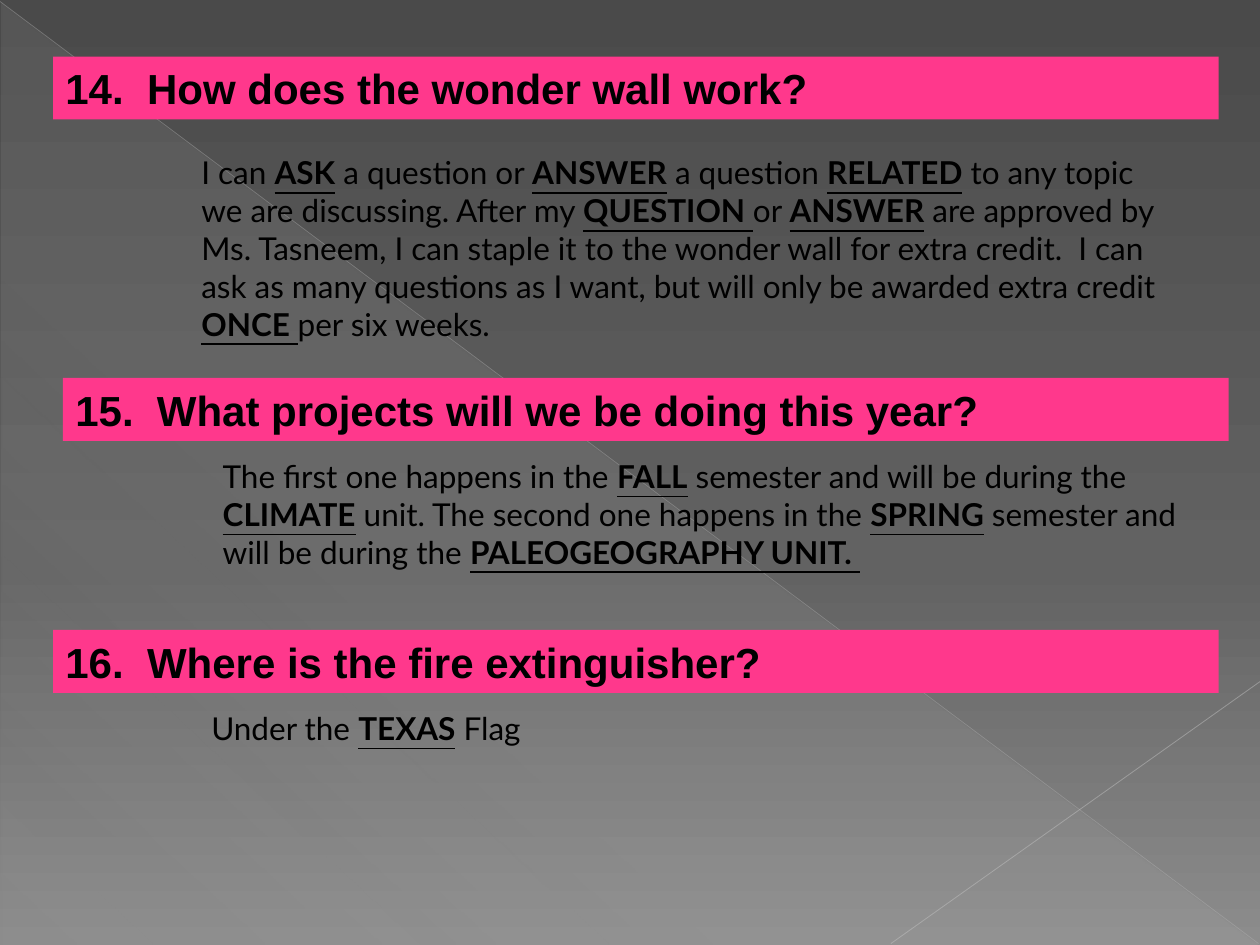
from lxml import etree
from pptx import Presentation
from pptx.dml.color import RGBColor
from pptx.enum.shapes import MSO_CONNECTOR, MSO_SHAPE
from pptx.enum.text import MSO_ANCHOR, PP_ALIGN
from pptx.oxml.ns import qn
from pptx.util import Cm, Pt

STRAIGHT = MSO_CONNECTOR.STRAIGHT
RECTANGLE = MSO_SHAPE.RECTANGLE
RIGHT_TRIANGLE = MSO_SHAPE.RIGHT_TRIANGLE
MIDDLE = MSO_ANCHOR.MIDDLE
LEFT = PP_ALIGN.LEFT

PINK = RGBColor(0xFF, 0x38, 0x8C)
BLACK = RGBColor(0x00, 0x00, 0x00)
DARK_GREY = RGBColor(0x4A, 0x4A, 0x4A)
MID_GREY = RGBColor(0x62, 0x62, 0x62)
LIGHT_GREY = RGBColor(0x8C, 0x8C, 0x8C)
PALE_GREY = RGBColor(0xD2, 0xD2, 0xD2)
LONG_LINE = RGBColor(0xBF, 0xBF, 0xBF)
SHORT_LINE = RGBColor(0xC6, 0xC6, 0xC6)

BACKGROUND_STOPS = [(0, DARK_GREY, 100), (60, MID_GREY, 100), (100, LIGHT_GREY, 100)]
TRIANGLE_STOPS = [(0, PALE_GREY, 10), (70, PALE_GREY, 8), (100, PALE_GREY, 1)]

QUESTIONS = [
    (1.07, 1.14, "14.  How does the wonder wall work?"),
    (1.27, 7.62, "15.  What projects will we be doing this year?"),
    (1.07, 12.7, "16.  Where is the fire extinguisher?"),
]
ANSWERS = [
    (3.81, 2.97, 4.88,
     "I can *ASK* a question or *ANSWER* a question *RELATED* to any topic "
     "we are discussing. After my *QUESTION *or *ANSWER* are approved by "
     "Ms. Tasneem, I can staple it to the wonder wall for extra credit.  I can "
     "ask as many questions as I want, but will only be awarded extra credit "
     "*ONCE *per six weeks."),
    (4.24, 9.09, 3.33,
     "The first one happens in the *FALL* semester and will be during the "
     "*CLIMATE* unit. The second one happens in the *SPRING* semester and "
     "will be during the *PALEOGEOGRAPHY UNIT. *"),
    (4.01, 14.17, 1.8, "Under the *TEXAS* Flag"),
]


def set_alpha(color, percent):
    """Give a colour element an opacity in percent."""
    etree.SubElement(color, qn("a:alpha")).set("val", str(percent * 1000))


def set_gradient(fill, element, stops, angle):
    """Fill with a linear gradient running clockwise at the angle."""
    fill.gradient()
    fill.gradient_angle = 360 - angle
    stop_list = element.find(".//" + qn("a:gsLst"))
    for old in list(stop_list):
        stop_list.remove(old)
    for position, rgb, opacity in stops:
        stop = etree.SubElement(stop_list, qn("a:gs"))
        stop.set("pos", str(position * 1000))
        color = etree.SubElement(stop, qn("a:srgbClr"))
        color.set("val", str(rgb))
        if opacity < 100:
            set_alpha(color, opacity)


def add_triangle(slide):
    """Add the faint triangle behind the content."""
    s = slide.shapes.add_shape(RIGHT_TRIANGLE, Cm(0.03), Cm(0.05), Cm(25.35), Cm(19))
    s.shadow.inherit = False
    s.line.fill.background()
    set_gradient(s.fill, s._element, TRIANGLE_STOPS, 133)


def add_line(slide, x1, y1, x2, y2, rgb, width, opacity):
    """Add a thin translucent line."""
    s = slide.shapes.add_connector(STRAIGHT, Cm(x1), Cm(y1), Cm(x2), Cm(y2))
    s.line.color.rgb = rgb
    s.line.width = Pt(width)
    set_alpha(s._element.find(".//" + qn("a:srgbClr")), opacity)
    etree.SubElement(s._element.spPr, qn("a:effectLst"))


def format_run(r, font, size, bold):
    """Set the font of a run."""
    r.font.name = font
    r.font.size = Pt(size)
    r.font.bold = bold
    r.font.color.rgb = BLACK


def add_question(slide, left, top, text):
    """Add a pink bar with a question."""
    s = slide.shapes.add_shape(RECTANGLE, Cm(left), Cm(top), Cm(23.5), Cm(1.27))
    s.shadow.inherit = False
    s.fill.solid()
    s.fill.fore_color.rgb = PINK
    s.line.fill.background()
    tf = s.text_frame
    tf.text = text
    tf.word_wrap = True
    tf.vertical_anchor = MIDDLE
    p = tf.paragraphs[0]
    p.alignment = LEFT
    format_run(p.runs[0], "Arial", 24, True)


def add_answer(slide, left, top, height, text):
    """Add an answer whose starred words are bold and underlined."""
    s = slide.shapes.add_textbox(Cm(left), Cm(top), Cm(20.12), Cm(height))
    tf = s.text_frame
    tf.word_wrap = True
    p = tf.paragraphs[0]
    for i, part in enumerate(text.split("*")):
        if part:
            key_word = i % 2 == 1
            r = p.add_run()
            r.text = part
            format_run(r, "Lato", 18, key_word)
            r.font.underline = key_word


def main():
    """Build the slide and save it."""
    prs = Presentation()
    prs.slide_width, prs.slide_height = Cm(25.4), Cm(19.05)
    slide = prs.slides.add_slide(prs.slide_layouts[6])
    set_gradient(slide.background.fill, slide._element, BACKGROUND_STOPS, 90)
    add_triangle(slide)
    add_line(slide, 0, 0.03, 25.37, 19.02, LONG_LINE, 0.39, 35)
    add_line(slide, 25.4, 13.74, 17.96, 19.02, SHORT_LINE, 0.47, 45)
    for question, answer in zip(QUESTIONS, ANSWERS):
        add_question(slide, *question)
        add_answer(slide, *answer)
    prs.save("out.pptx")


if __name__ == "__main__":
    main()
